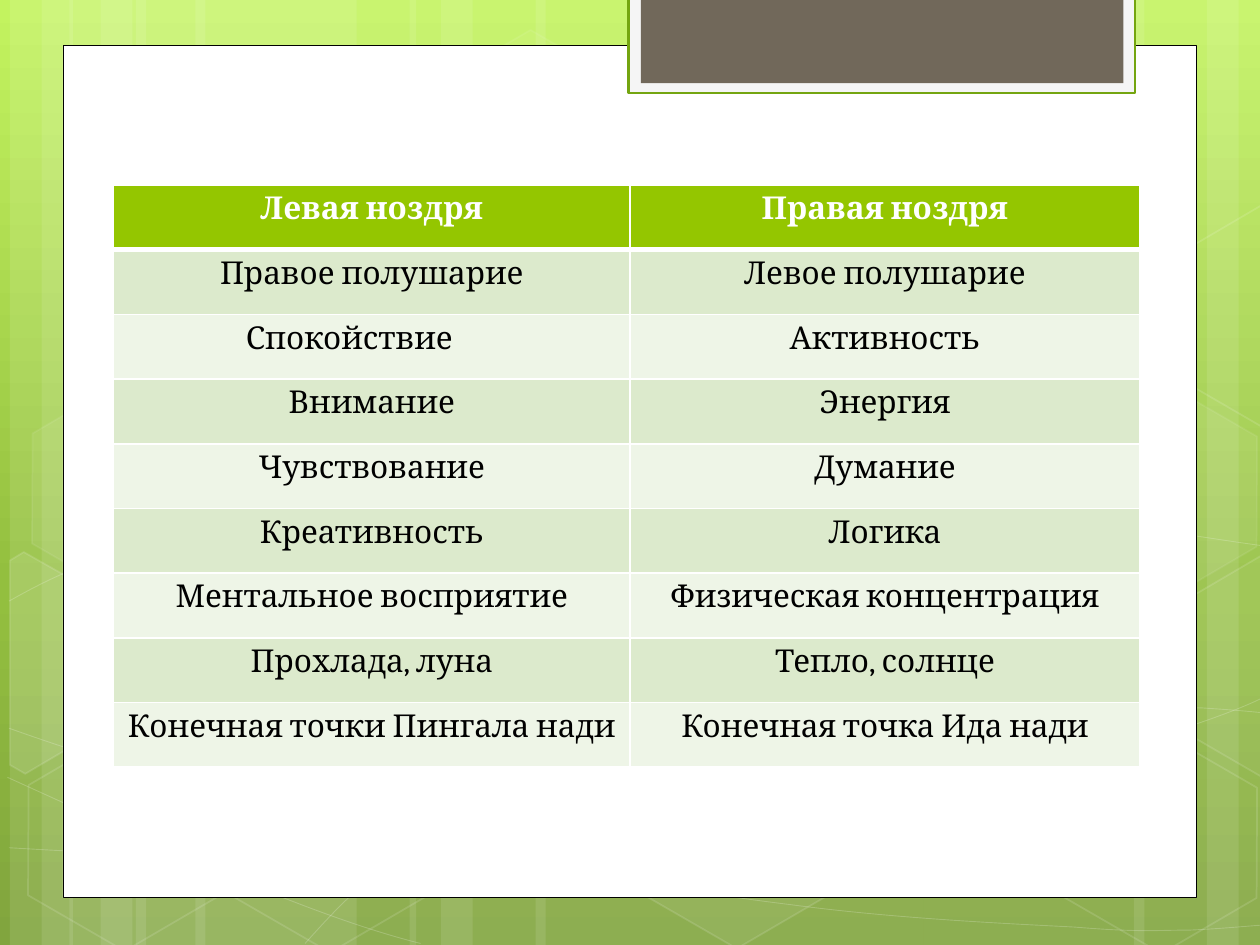
from copy import deepcopy
from pptx import Presentation
from pptx.dml.color import RGBColor
from pptx.enum.shapes import MSO_SHAPE as Preset
from pptx.enum.text import PP_ALIGN as Align
from pptx.oxml.ns import qn
from pptx.util import Cm, Pt
from lxml.etree import SubElement

ROWS = [
    ("Левая ноздря", "Правая ноздря"),
    ("Правое полушарие", "Левое полушарие"),
    ("Спокойствие\t", "Активность"),
    ("Внимание", "Энергия"),
    ("Чувствование", "Думание"),
    ("Креативность", "Логика"),
    ("Ментальное восприятие", "Физическая концентрация"),
    ("Прохлада, луна", "Тепло, солнце"),
    ("Конечная точки Пингала нади", "Конечная точка Ида нади"),
]
COLUMN_WIDTHS = (10.41, 10.28)
HEADER_FILL, ROW_FILLS = "94C600", ("EEF5E7", "DCEACC")
WHITE = "FFFFFF"
WIDTH, HEIGHT = 25.4, 19.05

BACKGROUND_STOPS = [(0, "C3F35F"), (0.62, "93BF3F"), (1, "81A53E")]
BANDS = [
    (2.74, 4.45), (0.2, 1.27), (0.84, 2.11), (3.94, 4.45), (1.4, 1.27), (2.03, 2.11),
    (18.62, 4.45), (24.33, 1.27), (22.86, 2.11), (10.8, 7.82), (8.26, 1.27), (8.89, 2.11),
]
CURVES = [
    [(0.18, 17.09), (1.55, 17.17), (2.92, 17.25), (4.83, 17.22), (6.73, 17.2),
     (9.09, 17.15), (11.63, 16.89), (14.17, 16.64), (17.78, 16.15), (20.12, 15.67),
     (22.43, 15.19), (24.82, 14.43), (25.58, 14)],
    [(0.18, 12.12), (0.91, 11.71), (1.65, 11.33), (3.07, 10.95), (4.52, 10.57),
     (6.58, 10.01), (8.81, 9.83), (11.07, 9.65), (13.82, 9.63), (16.61, 9.83),
     (19.41, 10.03), (24.05, 10.82), (25.58, 11.02)],
    [(0.15, 15.67), (3.23, 17.07), (6.27, 18.47), (8.48, 19.02)],
    [(0.18, 14.68), (0.97, 14.96), (1.78, 15.24), (3.25, 15.65), (4.72, 16.03),
     (6.93, 16.66), (9.07, 17.09), (11.18, 17.53), (13.84, 17.98), (15.95, 18.24),
     (18.06, 18.52), (20.32, 18.62), (21.67, 18.69), (22.99, 18.8), (23.34, 18.75),
     (24, 18.75), (24.66, 18.72), (25.12, 18.67), (25.58, 18.64)],
    [(6.15, 19.02), (6.6, 18.52), (7.06, 18.01), (7.67, 17.55), (8.28, 17.09),
     (9.14, 16.59), (9.86, 16.23), (10.57, 15.88), (11, 15.72), (11.94, 15.47),
     (12.85, 15.21), (14.55, 14.86), (15.44, 14.68), (16.36, 14.5), (16.48, 14.5),
     (17.27, 14.45), (18.08, 14.38), (19.3, 14.3), (20.17, 14.27), (21.06, 14.25),
     (22.5, 14.27), (22.5, 14.27), (23.07, 14.27), (23.64, 14.27), (24.21, 14.27),
     (24.66, 14.3), (25.1, 14.33), (25.55, 14.38)],
]
HEXAGONS = [
    (8.48, 0.91, 4, 8), (12.62, 14.96, 6, 12), (0.28, 15.01, None, 12), (0.36, 7.92, 7, 8),
    (4.42, 15.04, None, 12), (19.13, 11.51, 10, 12), (21.18, 15.06, None, 12),
    (21.18, 7.98, 7, 8),
]
CUT_HEXAGONS = [
    (10, [(0.2, 11.3), (0.48, 11.13), (2.44, 12.24), (2.41, 14.48), (0.51, 15.6), (0.2, 15.42)]),
    (4, [(23.52, 12.32), (25.43, 11.2), (25.63, 11.33), (25.63, 15.57), (25.45, 15.67),
         (23.52, 14.55)]),
    (None, [(23.52, 5.26), (25.43, 4.14), (25.65, 4.27), (25.63, 8.51), (25.45, 8.61),
            (23.52, 7.49)]),
]
PANELS = [
    ((1.27, 0.91, 22.86, 17.19), WHITE, ("000000", 0.5)),
    ((12.67, -0.05, 10.21, 1.93), "F5F5F5", ("74A510", 1.25)),
    ((12.92, -0.05, 9.73, 1.73), "71685A", None),
]


def color(value):
    return RGBColor.from_string(value)


def set_alpha(shape, query, percent):
    if percent < 100:
        for node in shape.element.spPr.xpath(query):
            SubElement(node, qn("a:alpha")).set("val", str(percent * 1000))


def paint(shape, fill=None, line=None, fill_alpha=100, line_alpha=100):
    shape.shadow.inherit = False
    if fill:
        shape.fill.solid()
        shape.fill.fore_color.rgb = color(fill)
        set_alpha(shape, "a:solidFill/a:srgbClr", fill_alpha)
    else:
        shape.fill.background()
    if line:
        shape.line.color.rgb = color(line[0])
        shape.line.width = Pt(line[1])
        set_alpha(shape, "a:ln/a:solidFill/a:srgbClr", line_alpha)
    else:
        shape.line.fill.background()


def add_preset(shapes, preset, box):
    return shapes.add_shape(preset, *(Cm(length) for length in box))


def add_outline(shapes, points, close):
    start, *others = [(Cm(x), Cm(y)) for x, y in points]
    builder = shapes.build_freeform(*start)
    builder.add_line_segments(others, close=close)
    return builder.convert_to_shape()


def add_curve(shapes, points):
    shape = add_outline(shapes, points, False)
    outline = shape.element.spPr.xpath("a:custGeom/a:pathLst/a:path")[0]
    segments = outline.findall(qn("a:lnTo"))
    for first in range(0, len(segments), 3):
        bezier = SubElement(outline, qn("a:cubicBezTo"))
        for segment in segments[first:first + 3]:
            bezier.append(segment[0])
            outline.remove(segment)
    return shape


def paint_background(slide):
    fill = slide.background.fill
    fill.gradient()
    fill.gradient_angle = 270
    stop_list = slide.element.xpath(".//p:bg//a:gsLst")[0]
    stop_list.append(deepcopy(stop_list[-1]))
    for stop, (position, value) in zip(fill.gradient_stops, BACKGROUND_STOPS):
        stop.position = position
        stop.color.rgb = color(value)


def add_backdrop(shapes):
    for left, width in BANDS:
        paint(add_preset(shapes, Preset.RECTANGLE, (left, 0, width, HEIGHT)), WHITE, fill_alpha=10)
    for points in CURVES:
        paint(add_curve(shapes, points), line=(WHITE, 0.5), line_alpha=20)
    for left, top, fill_alpha, line_alpha in HEXAGONS:
        hexagon = add_preset(shapes, Preset.HEXAGON, (left, top, 4.45, 3.86))
        hexagon.adjustments[0] = 0.285
        hexagon.rotation = 30
        paint(hexagon, fill_alpha and WHITE, (WHITE, 1), fill_alpha, line_alpha)
    for fill_alpha, corners in CUT_HEXAGONS:
        paint(add_outline(shapes, corners, True), fill_alpha and WHITE, (WHITE, 1), fill_alpha, 12)
    for box, fill, line in PANELS:
        paint(add_preset(shapes, Preset.RECTANGLE, box), fill, line)


def set_borders(cell, widths):
    properties = cell._tc.get_or_add_tcPr()
    for index, (side, width) in enumerate(widths.items()):
        border = SubElement(properties, qn("a:ln" + side))
        border.set("w", str(Pt(width)))
        solid = SubElement(border, qn("a:solidFill"))
        SubElement(solid, qn("a:srgbClr")).set("val", WHITE)
        properties.insert(index, border)


def add_nostril_table(shapes):
    table = shapes.add_table(len(ROWS), len(COLUMN_WIDTHS), Cm(2.29), Cm(3.73),
                             Cm(sum(COLUMN_WIDTHS)), Cm(11.74)).table
    for column, width in zip(table.columns, COLUMN_WIDTHS):
        column.width = Cm(width)
    for row, texts in enumerate(ROWS):
        header = row == 0
        borders = {"L": 1, "R": 1, "T": 1, "B": 3 if header else 1}
        if row == 1:
            del borders["T"]
        for column, text in enumerate(texts):
            cell = table.cell(row, column)
            cell.fill.solid()
            cell.fill.fore_color.rgb = color(HEADER_FILL if header else ROW_FILLS[row % 2])
            set_borders(cell, borders)
            paragraph = cell.text_frame.paragraphs[0]
            paragraph.alignment = Align.CENTER
            run = paragraph.add_run()
            run.text = text
            run.font.name = "Cambria"
            run.font.size = Pt(18)
            run.font.bold = header
            run.font.color.rgb = color(WHITE if header else "000000")


def main():
    presentation = Presentation()
    presentation.slide_width, presentation.slide_height = Cm(WIDTH), Cm(HEIGHT)
    slide = presentation.slides.add_slide(presentation.slide_layouts[6])
    paint_background(slide)
    add_backdrop(slide.shapes)
    add_nostril_table(slide.shapes)
    presentation.save("out.pptx")


if __name__ == "__main__":
    main()
